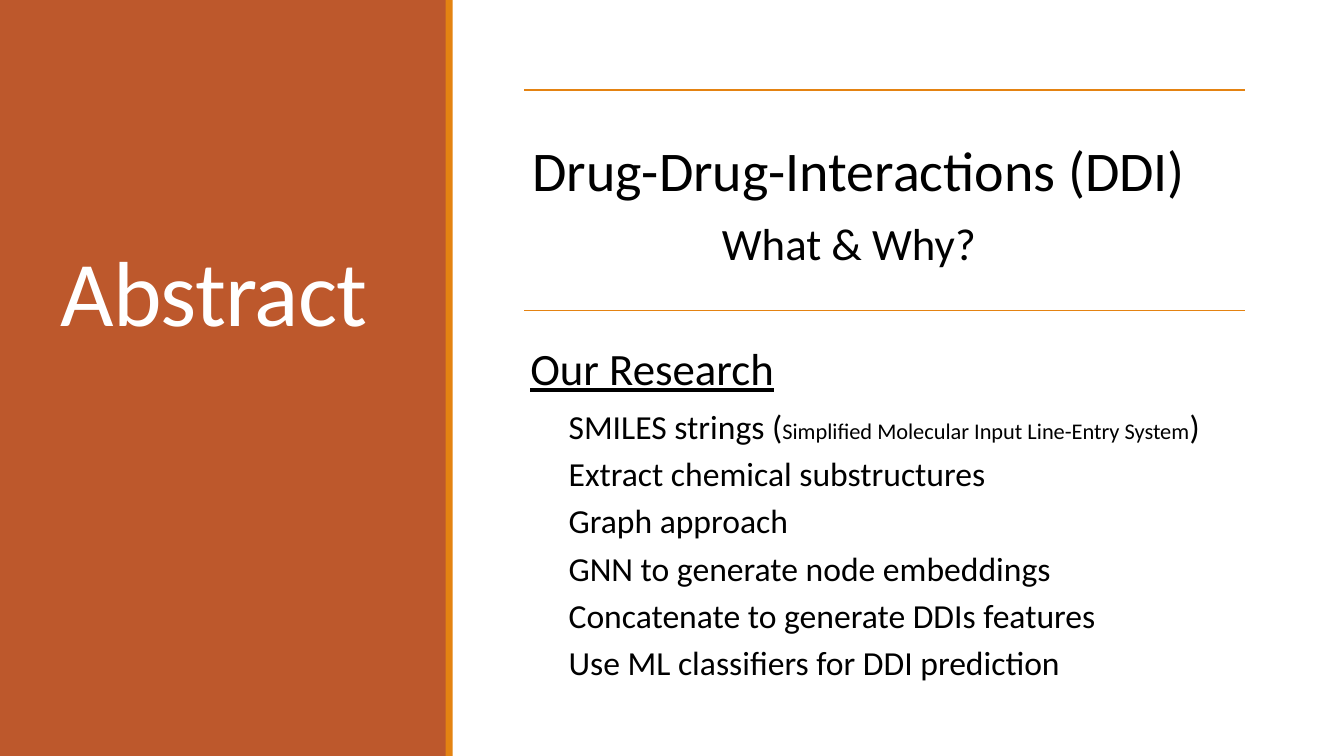
from dataclasses import dataclass

from lxml import etree
from pptx import Presentation
from pptx import util as u
from pptx.dml.color import RGBColor
from pptx.enum import shapes, text
from pptx.oxml.ns import qn


@dataclass(frozen=True)
class Theme:
    font: str = "Calibri"
    rust: str = "BD582C"
    gold: str = "E48312"
    white: str = "FFFFFF"
    black: str = "000000"
    title: int = 66
    lead: int = 40
    head: int = 32
    item: int = 24
    note: int = 16
    rule: float = 1.25
    gap: float = 0.33


THEME = Theme()
ITEMS = [
    "Extract chemical substructures",
    "Graph approach",
    "GNN to generate node embeddings",
    "Concatenate to generate DDIs features",
    "Use ML classifiers for DDI prediction",
]


def style(run, size, color=THEME.black):
    run.font.name = THEME.font
    run.font.size = u.Pt(size)
    run.font.color.rgb = RGBColor.from_string(color)


def add_bar(slide, left, top, width, height, color):
    bar = slide.shapes.add_shape(
        shapes.MSO_SHAPE.RECTANGLE, *map(u.Inches, (left, top, width, height)))
    bar.shadow.inherit = False
    bar.fill.solid()
    bar.fill.fore_color.rgb = RGBColor.from_string(color)
    bar.line.fill.background()


def add_rule(slide, left, top, width):
    rule = slide.shapes.add_connector(
        shapes.MSO_CONNECTOR.STRAIGHT, u.Inches(left), u.Inches(top),
        u.Inches(left + width), u.Inches(top))
    rule.line.color.rgb = RGBColor.from_string(THEME.gold)
    rule.line.width = u.Pt(THEME.rule)
    etree.SubElement(rule.element.spPr, qn("a:effectLst"))


def add_lines(slide, left, top, width, height, lines):
    box = slide.shapes.add_textbox(*map(u.Inches, (left, top, width, height)))
    frame = box.text_frame
    frame.word_wrap = True
    frame.margin_left = frame.margin_right = 0
    frame.margin_top = frame.margin_bottom = 0
    frame.text = "\n".join(line for line, size, indent in lines)
    for para, (line, size, indent) in zip(frame.paragraphs, lines):
        para.line_spacing = 0.9
        para.space_after = u.Pt(size * THEME.gap)
        para._p.get_or_add_pPr().set("marL", str(u.Inches(indent)))
        for run in para.runs:
            style(run, size)
    return frame


def add_side(slide, left, top, width, height):
    add_bar(slide, left, top, width, height, THEME.rust)
    add_bar(slide, left + width - 0.01, top, 0.07, height, THEME.gold)
    title = slide.shapes.title
    title.left, title.top = u.Inches(left + 0.5), u.Inches(top + 0.65)
    title.width, title.height = u.Inches(3.5), u.Inches(2.83)
    frame = title.text_frame
    frame.text = "Abstract"
    frame.word_wrap = True
    frame.auto_size = text.MSO_AUTO_SIZE.NONE
    frame.vertical_anchor = text.MSO_ANCHOR.BOTTOM
    para = frame.paragraphs[0]
    para.alignment = text.PP_ALIGN.LEFT
    para.line_spacing = 0.85
    run = para.runs[0]
    style(run, THEME.title, THEME.white)
    run.font._element.set("spc", "-50")
    slide.shapes._spTree.append(title.element)


def add_topic(slide, left, top, width, height):
    add_rule(slide, left, top, width)
    add_lines(slide, left + 0.08, top + 0.53, width - 0.16, height - 0.61, [
        ("Drug-Drug-Interactions (DDI)", THEME.lead, 0),
        ("What & Why?", THEME.head, 1.88),
    ])


def add_study(slide, left, top, width, height):
    add_rule(slide, left, top, width)
    rows = [("Our Research", THEME.head, 0), ("SMILES strings (", THEME.item, 0.38)]
    rows += [(item, THEME.item, 0.38) for item in ITEMS]
    frame = add_lines(
        slide, left + 0.06, top + 0.36, width - 0.12, height - 0.42, rows)
    head, smiles = frame.paragraphs[:2]
    head.runs[0].font.underline = True
    for part, size in (
            ("Simplified Molecular Input Line-Entry System", THEME.note),
            (")", THEME.item)):
        run = smiles.add_run()
        run.text = part
        style(run, size)


def main():
    deck = Presentation()
    deck.slide_width, deck.slide_height = u.Inches(13.33), u.Inches(7.5)
    slide = deck.slides.add_slide(deck.slide_layouts[5])
    add_side(slide, 0, 0, 4.43, 7.5)
    add_topic(slide, 5.2, 0.89, 7.15, 2.19)
    add_study(slide, 5.2, 3.08, 7.15, 3.47)
    deck.save("out.pptx")


if __name__ == "__main__":
    main()
